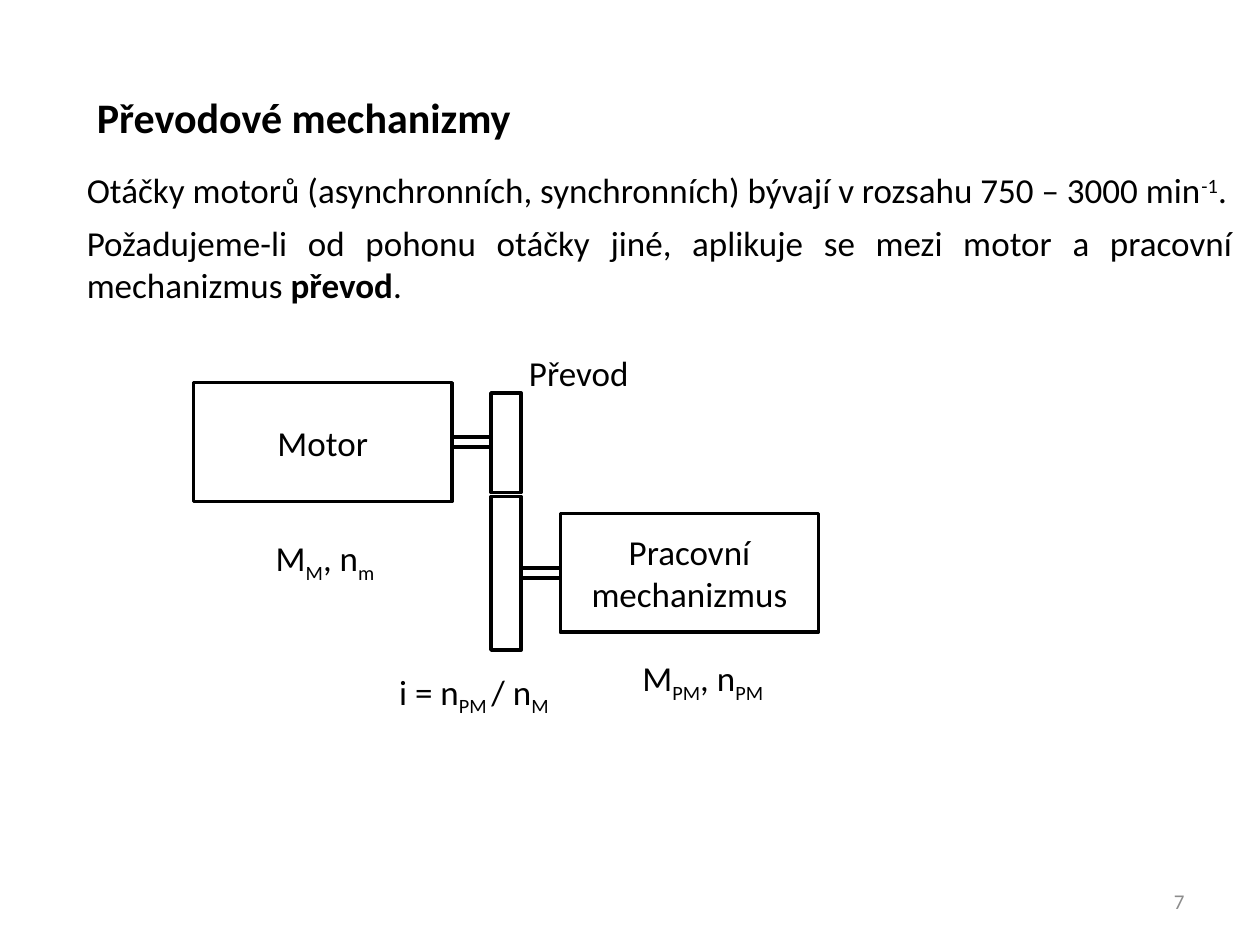
from pptx import Presentation
from pptx.dml.color import RGBColor
from pptx.enum.shapes import MSO_SHAPE
from pptx.enum.text import MSO_ANCHOR, PP_ALIGN
from pptx.util import Pt

BLACK = RGBColor(0, 0, 0)
WHITE = RGBColor(255, 255, 255)
GRAY = RGBColor(0x8C, 0x8C, 0x8C)
FONT = "Calibri"
BASELINES = {"sub": "-25000", "sup": "30000"}

# A paragraph is a list of (text, style) runs.
TITLE = [("Převodové mechanizmy", "bold")]
SPEEDS = [
    ("Otáčky motorů (asynchronních, synchronních) bývají v rozsahu 750 – 3000 min", ""),
    ("-1", "sup"), (".", ""),
]
GEARING = [
    ("Požadujeme-li od pohonu otáčky jiné, aplikuje se mezi motor a pracovní mechanizmus ", ""),
    ("převod", "bold"), (".", ""),
]

# Left, top, width, height in points
TITLE_BOX = (48.24, 48.96, 635, 36)
BODY_BOX = (42.5, 92.9, 669, 85.7)
NUMBER_BOX = (516.25, 500.4, 167.75, 28.8)

LABELS = [
    ((150.5, 303.1, 79.2, 31.5), [("M", ""), ("M", "sub"), (", n", ""), ("m", "sub")]),
    ((360, 371.5, 136, 31.5), [("M", ""), ("PM", "sub"), (", n", ""), ("PM", "sub")]),
    ((295.2, 197.3, 136, 31.5), [("Převod", "")]),
    ((221, 379.4, 153.4, 31.5), [("i = n", ""), ("PM ", "sub"), ("/ n", ""), ("M", "sub")]),
]

MACHINE_W, MACHINE_H = 147.6, 67.9
MACHINES = {"Motor": (110.6, 218.7), "Pracovní mechanizmus": (320.2, 293.4)}
WHEEL_LEFT, WHEEL_W = 280.6, 17.3
WHEELS = [(224.6, 56.9), (283.7, 87.8)]  # top, height
SHAFT_H = 5.8


def write_paragraph(paragraph, runs, size=20, color=BLACK, **layout):
    for name, value in layout.items():
        setattr(paragraph, name, value)
    for text, style in runs:
        run = paragraph.add_run()
        run.text = text
        formats = {"name": FONT, "size": Pt(size), "bold": style == "bold"}
        for name, value in formats.items():
            setattr(run.font, name, value)
        run.font.color.rgb = color
        if style in BASELINES:
            run._r.get_or_add_rPr().set("baseline", BASELINES[style])


def add_text(slide, box, runs, anchor=MSO_ANCHOR.TOP, **options):
    frame = slide.shapes.add_textbox(*map(Pt, box)).text_frame
    frame.word_wrap = True
    frame.vertical_anchor = anchor
    write_paragraph(frame.paragraphs[0], runs, **options)
    return frame


def add_block(slide, left, top, width, height, text=""):
    """Add a white rectangle with a black outline."""
    shape = slide.shapes.add_shape(
        MSO_SHAPE.RECTANGLE, Pt(left), Pt(top), Pt(width), Pt(height))
    shape.shadow.inherit = False
    shape.fill.solid()
    shape.fill.fore_color.rgb = WHITE
    shape.line.color.rgb = BLACK
    shape.line.width = Pt(2)
    if text:
        shape.text_frame.vertical_anchor = MSO_ANCHOR.MIDDLE
        write_paragraph(shape.text_frame.paragraphs[0], [(text, "")],
                        alignment=PP_ALIGN.CENTER)


def add_shaft(slide, left, right, machine_top):
    """Join a machine and its wheel at the machine's mid-height."""
    top = machine_top + (MACHINE_H - SHAFT_H) / 2
    add_block(slide, left, top, right - left, SHAFT_H)


def main():
    presentation = Presentation()
    presentation.slide_width, presentation.slide_height = Pt(720), Pt(540)
    slide = presentation.slides.add_slide(presentation.slide_layouts[6])

    add_text(slide, NUMBER_BOX, [("7", "")], MSO_ANCHOR.MIDDLE,
             size=12, color=GRAY, alignment=PP_ALIGN.RIGHT)
    add_text(slide, TITLE_BOX, TITLE, size=24)
    body = add_text(slide, BODY_BOX, SPEEDS, space_after=Pt(6))
    write_paragraph(body.add_paragraph(), GEARING, alignment=PP_ALIGN.JUSTIFY)

    for name, (left, top) in MACHINES.items():
        add_block(slide, left, top, MACHINE_W, MACHINE_H, name)
    for top, height in WHEELS:
        add_block(slide, WHEEL_LEFT, top, WHEEL_W, height)

    (motor_left, motor_top), (driven_left, driven_top) = MACHINES.values()
    add_shaft(slide, motor_left + MACHINE_W, WHEEL_LEFT, motor_top)
    add_shaft(slide, WHEEL_LEFT + WHEEL_W, driven_left, driven_top)

    for box, runs in LABELS:
        add_text(slide, box, runs)

    presentation.save("out.pptx")


if __name__ == "__main__":
    main()
